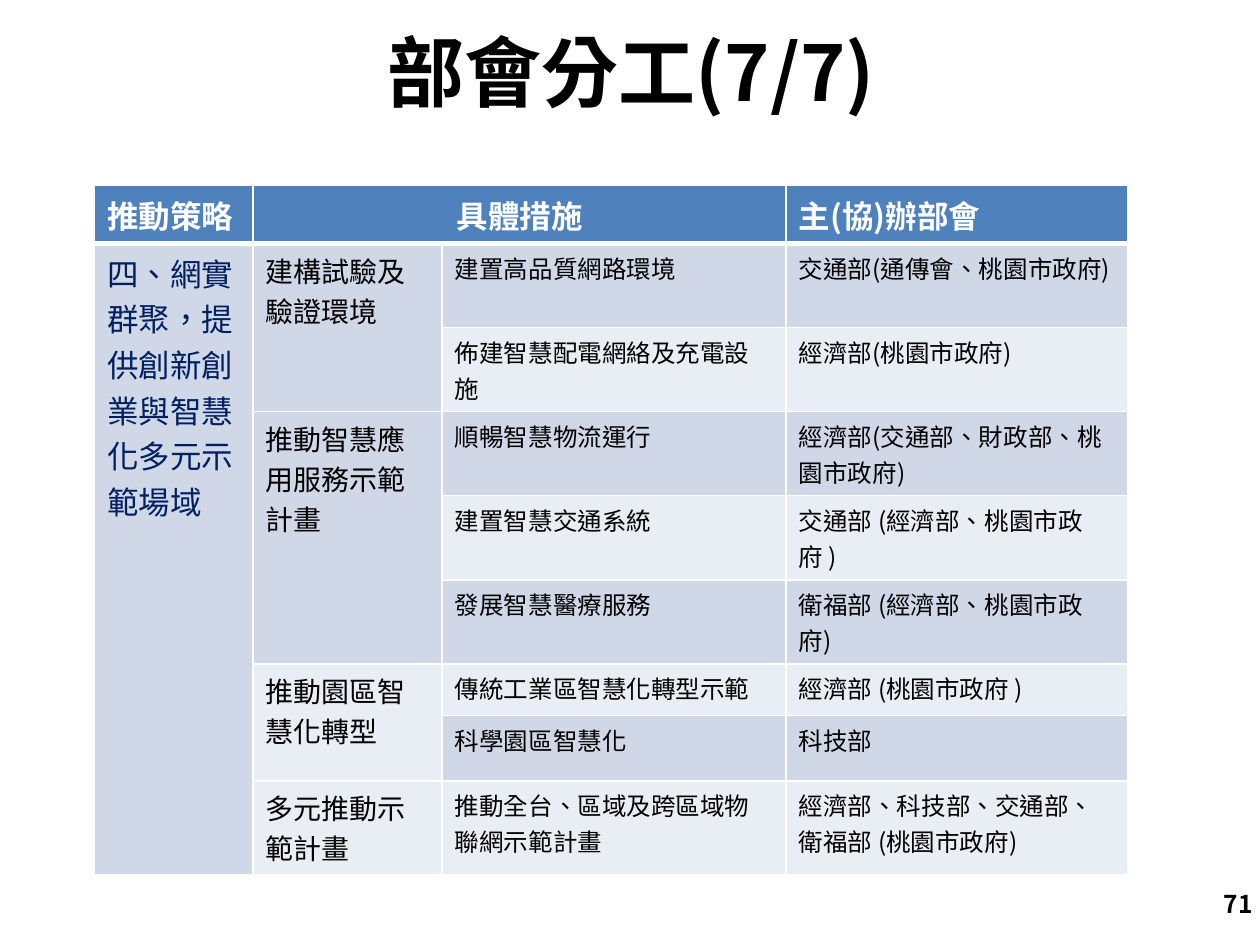
import pptx
import pptx.util
import pptx.dml.color
import pptx.enum.lang
import pptx.enum.text
import pptx.oxml
import pptx.oxml.ns

Inches, Pt = pptx.util.Inches, pptx.util.Pt
Color = pptx.dml.color.RGBColor.from_string
Align = pptx.enum.text.PP_ALIGN
Anchor = pptx.enum.text.MSO_ANCHOR

TITLE = "部會分工(7/7)"
PAGE = "71"
HEADS = ["推動策略", "具體措施", None, "主(協)辦部會"]
GOAL = "四、網實群聚，提供創新創業與智慧化多元示範場域"
PLANS = [
    ("建構試驗及驗證環境", [
        ("建置高品質網路環境", "交通部(通傳會、桃園市政府)"),
        ("佈建智慧配電網絡及充電設施", "經濟部(桃園市政府)"),
    ]),
    ("推動智慧應用服務示範計畫", [
        ("順暢智慧物流運行", "經濟部(交通部、財政部、桃園市政府)"),
        ("建置智慧交通系統", "交通部 (經濟部、桃園市政府 )"),
        ("發展智慧醫療服務", "衛福部 (經濟部、桃園市政府)"),
    ]),
    ("推動園區智慧化轉型", [
        ("傳統工業區智慧化轉型示範", "經濟部 (桃園市政府 )"),
        ("科學園區智慧化", "科技部"),
    ]),
    ("多元推動示範計畫", [
        ("推動全台、區域及跨區域物聯網示範計畫",
         "經濟部、科技部、交通部、衛福部 (桃園市政府)"),
    ]),
]
COLS = [1.26, 1.5, 2.73, 2.71]
ROWS = [0.29, 0.24, 0.41, 0.41, 0.24, 0.24, 0.41, 0.52, 0.7]

THEME = {
    "font": "Noto Sans CJK SC",
    "head fill": "4F81BD",
    "bands": ["D0D8E8", "E9EDF4"],
    "rule": "FFFFFF",
    "title": {"size": 44, "bold": True, "color": "000000"},
    "page": {"size": 14, "bold": True, "color": "000000"},
    "head": {"size": 18, "bold": True, "color": "FFFFFF"},
    "goal": {"size": 18, "bold": False, "color": "002060"},
    "plan": {"size": 16, "bold": False, "color": "000000"},
    "task": {"size": 14, "bold": False, "color": "000000"},
}


def write(frame, text, style, align=None):
    look = THEME[style]
    para = frame.paragraphs[0]
    para.alignment = align
    run = para.add_run()
    run.text = text
    font = run.font
    values = {
        "size": Pt(look["size"]),
        "bold": look["bold"],
        "name": THEME["font"],
        "language_id": pptx.enum.lang.MSO_LANGUAGE_ID.TRADITIONAL_CHINESE,
    }
    for key, value in values.items():
        setattr(font, key, value)
    font.color.rgb = Color(look["color"])
    east = pptx.oxml.parse_xml(
        f'<a:ea {pptx.oxml.ns.nsdecls("a")} typeface="{THEME["font"]}"/>')
    run._r.get_or_add_rPr().append(east)
    return para


def paint(cell, fill, base=1):
    """Fill a cell and rule its four sides; base is the lower rule in points."""
    cell.fill.solid()
    cell.fill.fore_color.rgb = Color(fill)
    props = cell._tc.get_or_add_tcPr()
    for spot, side in enumerate("LRTB"):
        width = Pt(base if side == "B" else 1)
        props.insert(spot, pptx.oxml.parse_xml(
            f'<a:ln{side} {pptx.oxml.ns.nsdecls("a")} w="{width}"><a:solidFill>'
            f'<a:srgbClr val="{THEME["rule"]}"/></a:solidFill></a:ln{side}>'))


def place(shape, left, top, width, height):
    sides = {"left": left, "top": top, "width": width, "height": height}
    for key, value in sides.items():
        setattr(shape, key, Inches(value))


def fill_table(table):
    for col, width in zip(table.columns, COLS):
        col.width = Inches(width)
    for row, height in zip(table.rows, ROWS):
        row.height = Inches(height)

    for r in range(len(ROWS)):
        for c in range(len(COLS)):
            if r == 0:
                paint(table.cell(r, c), THEME["head fill"], 3)
            else:
                band = 0 if c == 0 else (r - 1) % 2
                paint(table.cell(r, c), THEME["bands"][band])

    for c, head in enumerate(HEADS):
        if head:
            align = Align.CENTER if c == 1 else None
            write(table.cell(0, c).text_frame, head, "head", align)
    table.cell(0, 1).merge(table.cell(0, 2))

    write(table.cell(1, 0).text_frame, GOAL, "goal")
    table.cell(1, 0).merge(table.cell(len(ROWS) - 1, 0))

    top = 1
    for plan, tasks in PLANS:
        write(table.cell(top, 1).text_frame, plan, "plan")
        for r, pair in enumerate(tasks, top):
            for c, text in enumerate(pair, 2):
                write(table.cell(r, c).text_frame, text, "task")
        if len(tasks) > 1:
            table.cell(top, 1).merge(table.cell(top + len(tasks) - 1, 1))
        top += len(tasks)


def main():
    deck = pptx.Presentation()
    deck.slide_width, deck.slide_height = Inches(10), Inches(7.5)
    slide = deck.slides.add_slide(deck.slide_layouts[5])

    title = slide.shapes.title
    place(title, 0.51, 0, 9, 0.99)
    title.text_frame.vertical_anchor = Anchor.BOTTOM
    write(title.text_frame, TITLE, "title", Align.CENTER).line_spacing = 0.9

    spot = [Inches(v) for v in (0.75, 1.47, 8.19, 3.94)]
    fill_table(slide.shapes.add_table(len(ROWS), len(COLS), *spot).table)

    page = slide.shapes.add_textbox(0, 0, 0, 0)
    place(page, 7.71, 6.97, 2.33, 0.4)
    page.text_frame.word_wrap = True
    page.text_frame.vertical_anchor = Anchor.MIDDLE
    write(page.text_frame, PAGE, "page", Align.RIGHT)

    deck.save("out.pptx")


if __name__ == "__main__":
    main()
